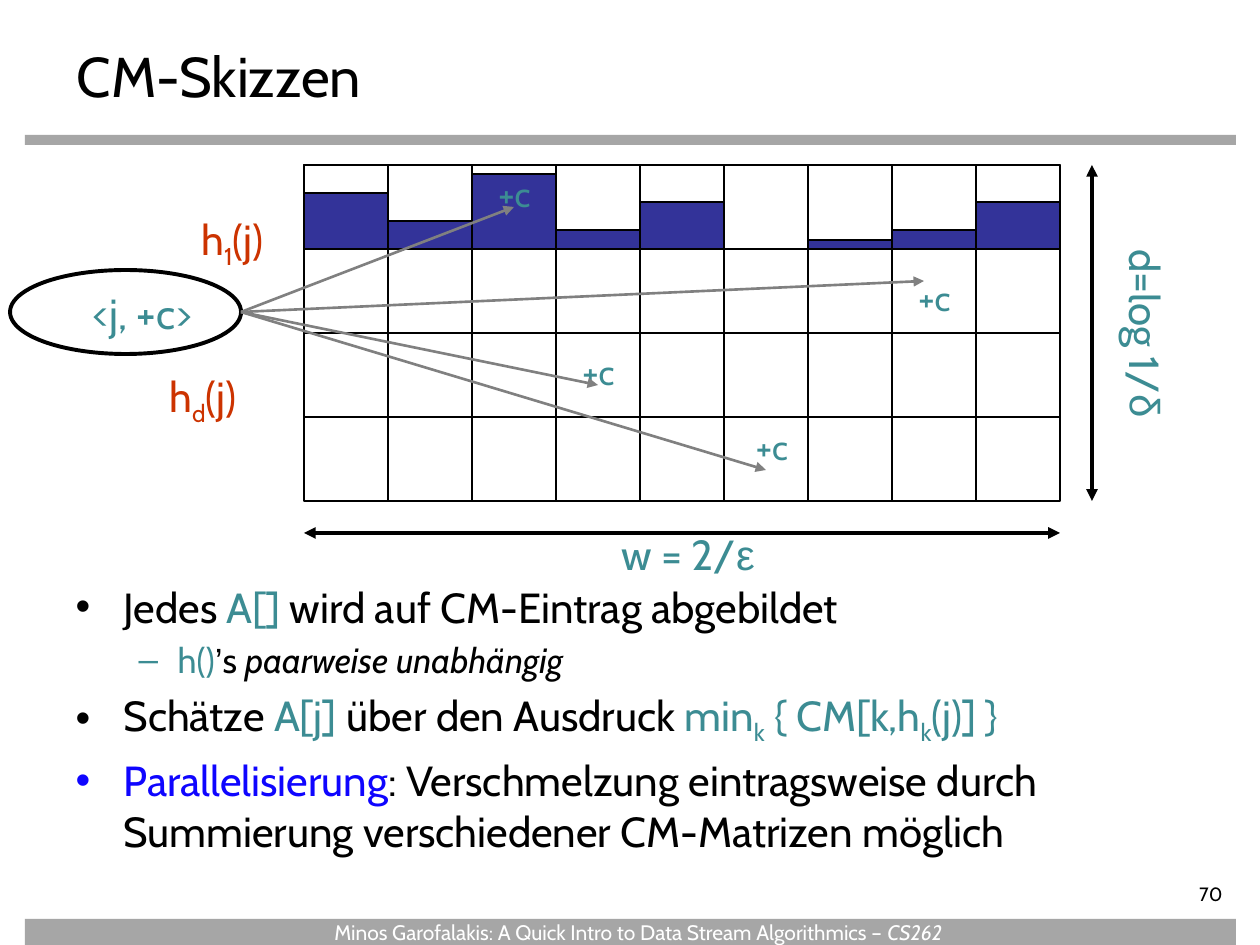
"""Builds the slide on count-min sketches."""
from dataclasses import dataclass

from pptx import Presentation
from pptx.dml.color import RGBColor
from pptx.enum.shapes import MSO_CONNECTOR, MSO_SHAPE
from pptx.enum.text import MSO_ANCHOR, MSO_AUTO_SIZE, PP_ALIGN
from pptx.oxml.ns import qn
from pptx.util import Emu, Pt
from lxml.etree import SubElement


@dataclass(frozen=True)
class Theme:
    font: str = "Cabin"
    greek: str = "Arial"
    black: str = "000000"
    white: str = "FFFFFF"
    band: str = "A6A6A6"
    teal: str = "3C8C93"
    blue: str = "0F05FF"
    navy: str = "333399"
    red: str = "CC3300"
    gray: str = "808080"
    head: int = 32
    main: int = 24
    sub: int = 20
    foot: int = 12
    page: int = 11
    thin: float = 0.75
    mid: float = 1.5
    bold: float = 2.25


THEME = Theme()


def px(count):
    return Emu(round(count * 914400 / 126))


def write(para, text, size=THEME.main, color=THEME.black, font=THEME.font,
          italic=False, low=False):
    run = para.add_run()
    run.text = text
    run.font.size = Pt(size)
    run.font.name = font
    run.font.italic = italic
    run.font.color.rgb = RGBColor.from_string(color)
    if low:
        run.font._element.set("baseline", "-25000")


class Canvas:
    def __init__(self, slide, theme):
        self.slide = slide
        self.theme = theme

    def place(self, shape, left, top, width, height):
        shape.left, shape.top = px(left), px(top)
        shape.width, shape.height = px(width), px(height)
        frame = shape.text_frame
        frame.auto_size = MSO_AUTO_SIZE.NONE
        frame.vertical_anchor = MSO_ANCHOR.TOP
        return frame

    def title(self, text, *area):
        para = self.place(self.slide.shapes.title, *area).paragraphs[0]
        para.alignment = PP_ALIGN.LEFT
        write(para, text, size=self.theme.head)

    def body(self, items, *area):
        frame = self.place(self.slide.placeholders[1], *area)
        for index, (level, runs) in enumerate(items):
            para = frame.add_paragraph() if index else frame.paragraphs[0]
            para.level = level
            size = self.theme.sub if level else self.theme.main
            margin, hang = (102, 39) if level else (48, 48)
            props = para._p.get_or_add_pPr()
            props.set("marL", str(px(margin)))
            props.set("indent", str(px(-hang)))
            para.space_before = Pt(0.2 * size if index else 0)
            for text, style in runs:
                write(para, text, size=size, **style)

    def label(self, runs, *area, align=PP_ALIGN.LEFT, turn=0, wrap=True, inset=True):
        box = self.slide.shapes.add_textbox(0, 0, 0, 0)
        frame = self.place(box, *area)
        frame.word_wrap = wrap
        box.rotation = turn
        if not inset:
            frame.margin_left = frame.margin_top = frame.margin_bottom = 0
        para = frame.paragraphs[0]
        para.alignment = align
        for text, style in runs:
            write(para, text, **style)

    def shape(self, left, top, width, height, fill=None, line=None,
              kind=MSO_SHAPE.RECTANGLE):
        item = self.slide.shapes.add_shape(
            kind, px(left), px(top), px(width), px(height))
        item.shadow.inherit = False
        if fill:
            item.fill.solid()
            item.fill.fore_color.rgb = RGBColor.from_string(fill)
        else:
            item.fill.background()
        if line:
            item.line.color.rgb = RGBColor.from_string(self.theme.black)
            item.line.width = Pt(line)
        else:
            item.line.fill.background()

    def line(self, start, end, color=THEME.black, width=THEME.thin, tips=()):
        item = self.slide.shapes.add_connector(
            MSO_CONNECTOR.STRAIGHT, *map(px, start + end))
        item.line.color.rgb = RGBColor.from_string(color)
        item.line.width = Pt(width)
        for tip in tips:
            SubElement(item.line._get_or_add_ln(), qn(f"a:{tip}"), type="triangle")
        SubElement(item._element.spPr, qn("a:effectLst"))

    def grid(self, left, top, cell, cols, rows):
        right, base = left + cols * cell, top + rows * cell
        self.shape(left, top, right - left, base - top, line=self.theme.thin)
        for x in range(left + cell, right, cell):
            self.line((x, top), (x, base))
        for y in range(top + cell, base, cell):
            self.line((left, y), (right, y))


def main():
    deck = Presentation()
    deck.slide_width, deck.slide_height = px(1260), px(945)
    look = THEME
    page = Canvas(deck.slides.add_slide(deck.slide_layouts[1]), look)
    teal, red = {"color": look.teal}, {"color": look.red}
    low = {"color": look.teal, "low": True}
    greek = {"color": look.teal, "font": look.greek}

    page.shape(25, 135, 1211, 10, fill=look.band)
    page.shape(25, 919, 1211, 26, fill=look.band)
    page.title("CM-Skizzen", 64, 35, 1134, 69)
    page.body([
        (0, [("Jedes ", {}), ("A[]", teal), (" wird auf CM-Eintrag abgebildet", {})]),
        (1, [("h()", teal), ("’", {"font": look.greek}), ("s ", {}),
             ("paarweise unabhängig", {"italic": True})]),
        (0, [("Schätze ", {}), ("A[j]", teal), (" über den Ausdruck ", {}),
             ("min", teal), ("k", low), (" { CM[k,h", teal), ("k", low),
             ("(j)] }", teal)]),
        (0, [("Parallelisierung", {"color": look.blue}),
             (": Verschmelzung eintragsweise durch Summierung verschiedener "
              "CM-Matrizen möglich", {})]),
    ], 63, 575, 1144, 325)

    left, top, cell, cols, rows = 304, 165, 84, 9, 4
    right, base = left + cols * cell, top + rows * cell
    page.shape(10, 270, 231, 84, line=look.bold, kind=MSO_SHAPE.OVAL)
    for col, count in enumerate((6, 3, 8, 2, 5, 0, 1, 2, 5)):
        if count:
            tall = round(count * cell / 9)
            page.shape(left + col * cell, top + cell - tall, cell, tall,
                       fill=look.navy, line=look.thin)
    for depth in (1, rows):
        page.grid(left, top, cell, cols, depth)

    for x, y, width in ((441, 166, 147), (861, 270, 147), (525, 344, 147),
                        (693, 419, 158)):
        page.label([("+c", {"size": look.sub, **teal})], x, y, width, 54,
                   align=PP_ALIGN.CENTER)
    for end in ((514, 207), (924, 281), (598, 385), (766, 470)):
        page.line((241, 312), end, color=look.gray, width=look.mid, tips=["tailEnd"])
    for sign, x, y, width in (("1", 189, 207, 136), ("d", 157, 364, 220)):
        page.label([("h", red), (sign, {"low": True, **red}), ("(j)", red)],
                   x, y, width, 63)
    page.label([("<j, +c>", teal)], 53, 281, 179, 63, align=PP_ALIGN.CENTER)

    for start, end in (((1092, top), (1092, base)), ((left, 533), (right, 533))):
        page.line(start, end, width=look.bold, tips=["headEnd", "tailEnd"])
    page.label([("d=log 1/", teal), ("δ", greek)], 1021, 302, 251, 63,
               align=PP_ALIGN.CENTER, turn=90)
    page.label([("w = 2/", teal), ("ε", greek)], 609, 522, 168, 63)
    page.label([("70", {"size": look.page})], 1096, 882, 139, 28,
               align=PP_ALIGN.RIGHT, inset=False)
    foot = {"size": look.foot, "color": look.white}
    page.label([("Minos Garofalakis: A Quick Intro to Data Stream Algorithmics – ", foot),
                ("CS262", {"italic": True, **foot})], 322, 913, 640, 33, wrap=False)
    deck.save("out.pptx")


if __name__ == "__main__":
    main()
